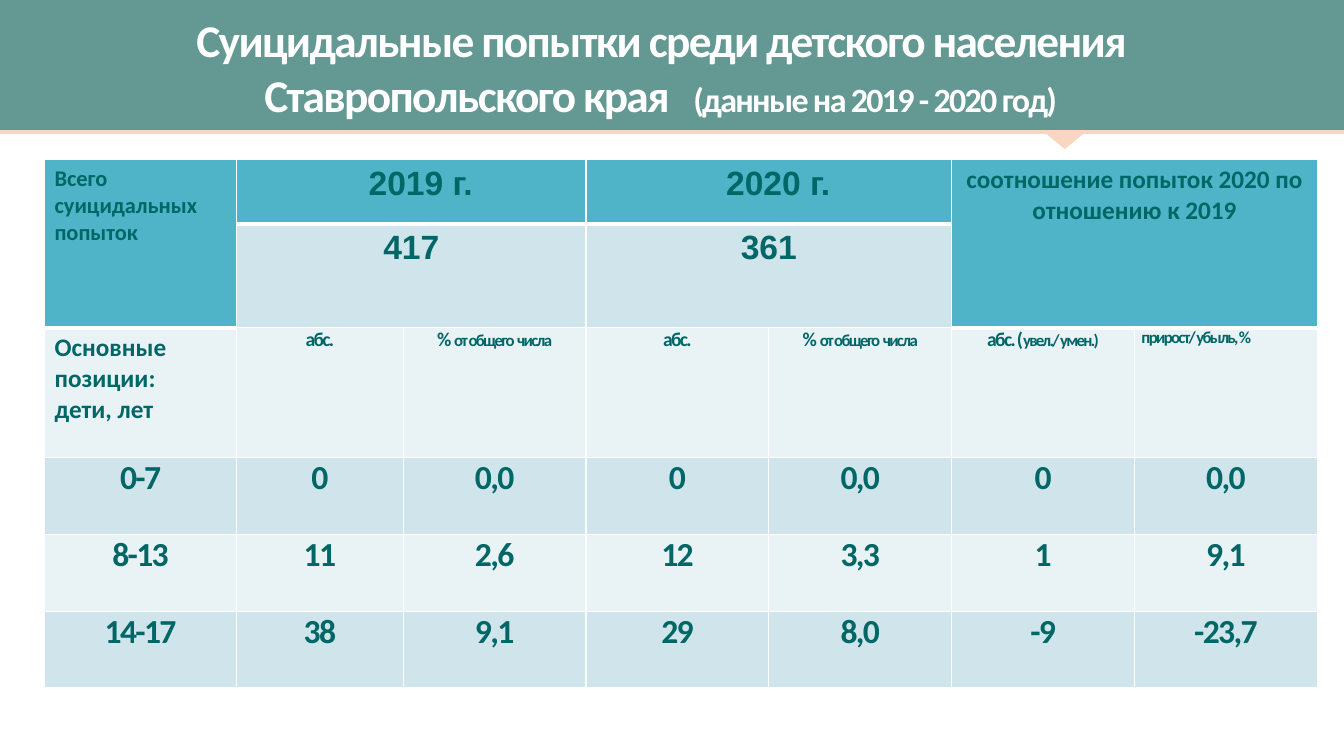
from pptx import Presentation
from pptx.util import Pt
from pptx.dml.color import RGBColor
from pptx.enum import shapes as sh, text as tx
from pptx.oxml import parse_xml
from pptx.oxml.ns import nsdecls

MID, LEFT = tx.PP_ALIGN.CENTER, tx.PP_ALIGN.LEFT
TEAL, PEACH, WHITE, INK = "649892", "F8D6BF", "FFFFFF", "006666"
HEAD, DARK, PALE = "50B4C8", "D0E5EB", "E9F2F5"


def paint(fmt, color):
    fmt.solid()
    fmt.fore_color.rgb = RGBColor.from_string(color)


def write(par, runs, align, color=INK, font="Calibri", gap=0):
    par.alignment = align
    for words, size in runs:
        run = par.add_run()
        run.text = words
        for key, val in dict(name=font, size=Pt(size), bold=True).items():
            setattr(run.font, key, val)
        paint(run.font.fill, color)
        if gap:
            run._r.get_or_add_rPr().set("spc", str(gap))


deck = Presentation()
deck.slide_width, deck.slide_height = Pt(960), Pt(540)
slide = deck.slides.add_slide(deck.slide_layouts[5])
tree = slide.shapes

# Header band with its pointer
kinds = sh.MSO_SHAPE
for kind, box, color, turn in (
        (kinds.RECTANGLE, (0, 0, 960, 95), TEAL, 0),
        (kinds.ISOSCELES_TRIANGLE, (746.6, 95, 28, 11.5), PEACH, 180)):
    part = tree.add_shape(kind, *map(Pt, box))
    part.shadow.inherit = False
    part.rotation = turn
    paint(part.fill, color)
    part.line.fill.background()
rule = tree.add_connector(sh.MSO_CONNECTOR.STRAIGHT, Pt(960), Pt(94.3), 0, Pt(94.3))
paint(rule.line.fill, PEACH)
rule.line.width = Pt(3)
rule._element.spPr.append(parse_xml(f"<a:effectLst {nsdecls('a')}/>"))

# Title, in front of the band
title = tree.title
tree._spTree.append(title._element)
for key, val in dict(left=48, top=0, width=848, height=95).items():
    setattr(title, key, Pt(val))
frame = title.text_frame
for key, val in dict(word_wrap=True, auto_size=tx.MSO_AUTO_SIZE.NONE,
                     vertical_anchor=tx.MSO_ANCHOR.MIDDLE,
                     margin_top=Pt(10), margin_bottom=Pt(2)).items():
    setattr(frame, key, val)
par = frame.paragraphs[0]
par.line_spacing = 0.85
write(par, [("Суицидальные попытки среди детского населения Ставропольского края", 32.4),
            ("  ", 39.6), ("(данные на 2019 - 2020 год)", 24.3)], MID, WHITE, gap=-120)

# Table grid
cols = [137.2, 119] + [130.6] * 5
rows = [46, 74.2, 92.9] + [54.8] * 3
grid = tree.add_table(len(rows), len(cols), Pt(31.8), Pt(114), Pt(sum(cols)), Pt(sum(rows))).table
for col, width in zip(grid.columns, cols):
    col.width = Pt(width)
for row, height in zip(grid.rows, rows):
    row.height = Pt(height)

# Fills and borders
fills = [HEAD, DARK, PALE, DARK, PALE, DARK]
for r, fill in enumerate(fills):
    for c in range(len(cols)):
        cell = grid.cell(r, c)
        tall = r < 2 and c in (0, 5, 6)
        props = cell._tc.get_or_add_tcPr()
        for side in "LRTB":
            thick = 3 if side == "B" and (r == 0 or tall) else 1
            props.append(parse_xml(
                f'<a:ln{side} w="{Pt(thick)}" {nsdecls("a")}><a:solidFill>'
                f'<a:srgbClr val="{WHITE}"/></a:solidFill></a:ln{side}>'))
        paint(cell.fill, HEAD if tall else fill)

# Merged heading cells
for r, c, r2, c2 in ((0, 0, 1, 0), (0, 1, 0, 2), (0, 3, 0, 4), (0, 5, 1, 6),
                     (1, 1, 1, 2), (1, 3, 1, 4)):
    grid.cell(r, c).merge(grid.cell(r2, c2))
for r, c, words, size, font, align in (
        (0, 0, "Всего суицидальных попыток", 16, "Calibri", LEFT),
        (0, 1, "  2019 г.", 24, "Arial", MID),
        (0, 3, "  2020 г.", 24, "Arial", MID),
        (0, 5, "соотношение попыток 2020 по отношению к 2019", 18, "Calibri", MID),
        (1, 1, "417", 24, "Arial", MID),
        (1, 3, "361", 24, "Arial", MID)):
    write(grid.cell(r, c).text_frame.paragraphs[0], [(words, size)], align, font=font)
frame = grid.cell(2, 0).text_frame
write(frame.paragraphs[0], [("Основные позиции:", 18)], LEFT)
write(frame.add_paragraph(), [("дети, лет", 18)], LEFT)

# Column labels and figures
count = [("абс.", 14)]
share = [("% ", 14), ("от общего  числа", 12)]
labels = [count, share, count, share,
          [("абс. (", 14), ("увел./ умен.)", 12)], [("прирост/ убыль, %", 12)]]
data = [("0-7", "0", "0,0", "0", "0,0", "0", "0,0"),
        ("8-13", "11", "2,6", "12", "3,3", "1", "9,1"),
        ("14-17", "38", "9,1", "29", "8,0", "-9", "-23,7")]
body = [(2, c, runs) for c, runs in enumerate(labels, 1)]
body += [(r, c, [(val, 24)]) for r, line in enumerate(data, 3) for c, val in enumerate(line)]
for r, c, runs in body:
    cell = grid.cell(r, c)
    for key, val in dict(left=5, right=5, top=0, bottom=0).items():
        setattr(cell, "margin_" + key, Pt(val))
    write(cell.text_frame.paragraphs[0], runs, LEFT if (r, c) == (2, 6) else MID, gap=-120)

deck.save("out.pptx")
